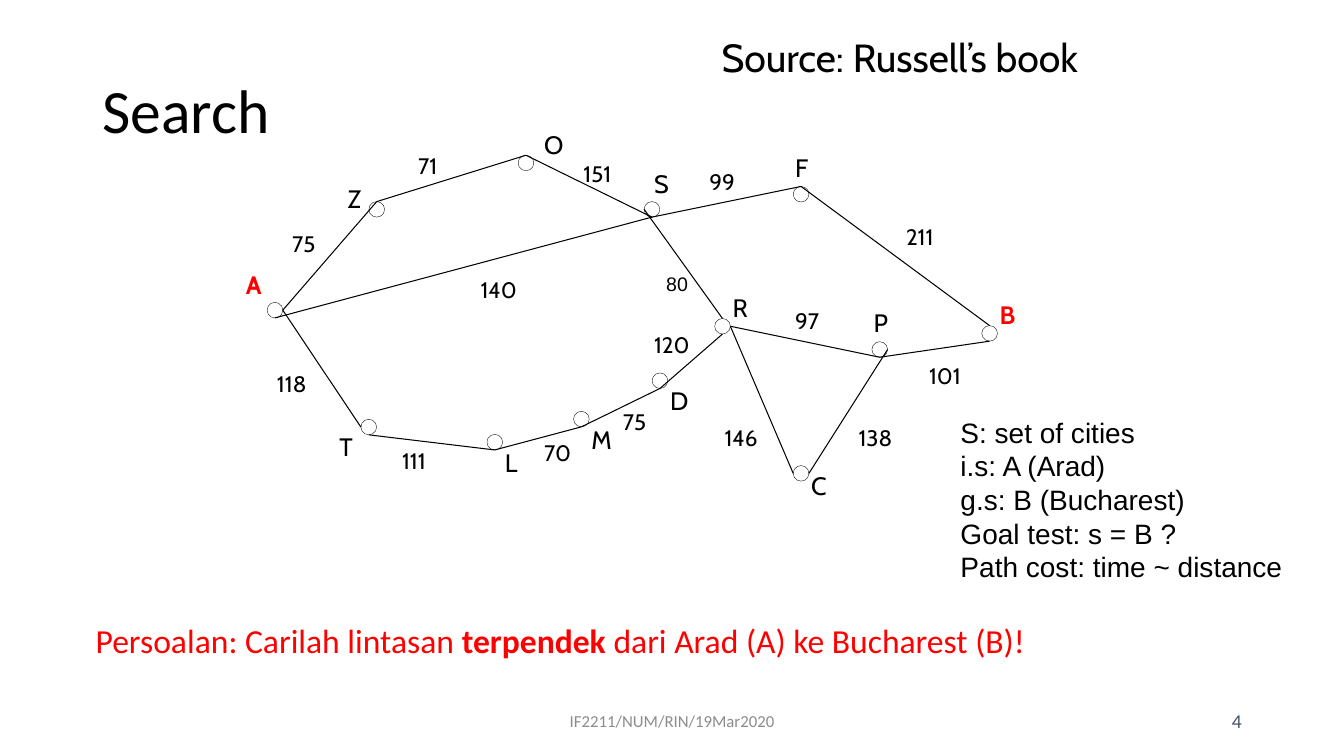
from lxml import etree
from pptx import Presentation
from pptx.dml.color import RGBColor
from pptx.enum.shapes import MSO_CONNECTOR as CONN, MSO_SHAPE as SHAPE
from pptx.enum.text import MSO_ANCHOR as ANCHOR, PP_ALIGN as ALIGN
from pptx.oxml.ns import qn
from pptx.util import Pt

BLACK = RGBColor(0x00, 0x00, 0x00)
RED = RGBColor(0xFF, 0x00, 0x00)
GRAY = RGBColor(0x8C, 0x8C, 0x8C)
SLATE = RGBColor(0x44, 0x54, 0x6A)

NODE_W, NODE_H = 11.2, 11.1
# Connection sites as fractions of the node's width and height
SITES = {"top": (0.5, 0), "bottom": (0.5, 1), "left": (0, 0.5), "right": (1, 0.5)}

# City: node left and top, label left and top
CITIES = {
    "A": (190.8, 216, 168.5, 188.6),
    "T": (257.8, 299.5, 235.4, 304.6),
    "R": (510.5, 227.5, 516.2, 205.2),
    "C": (566.6, 332.6, 572.4, 332.6),
    "P": (622.8, 244.1, 617, 216),
    "B": (701.3, 232.6, 707, 210.2),
    "F": (566.6, 133.2, 560.9, 105.1),
    "S": (460.1, 144, 460.1, 116.6),
    "O": (370.1, 110.9, 381.6, 88.6),
    "Z": (263.5, 144, 241.2, 127.4),
    "D": (465.8, 266.4, 471.6, 271.4),
    "M": (409.7, 293.8, 415.4, 299.5),
    "L": (347.8, 310.3, 353.5, 316.1),
}
ENDPOINTS = ("A", "B")

# Road: both ends, distance, distance label left and top
ROADS = [
    ("A", "right", "Z", "top", "75", 201.6, 160.6),
    ("Z", "top", "O", "top", "71", 291.6, 105.1),
    ("O", "top", "S", "bottom", "151", 409.7, 110.9),
    ("A", "bottom", "S", "bottom", "140", 336.2, 193.7),
    ("P", "bottom", "B", "bottom", "101", 656.6, 254.9),
    ("R", "right", "P", "bottom", "97", 560.9, 216),
    ("C", "right", "P", "right", "138", 606.2, 299.5),
    ("C", "left", "R", "right", "146", 510.5, 299.5),
    ("D", "bottom", "R", "bottom", "120", 460.1, 233.3),
    ("M", "bottom", "D", "bottom", "75", 437.8, 288),
    ("L", "bottom", "M", "bottom", "70", 381.6, 310.3),
    ("T", "left", "A", "right", "118", 190.8, 260.6),
    ("T", "bottom", "L", "bottom", "111", 280.1, 316.1),
    ("R", "top", "S", "left", "80", 468.7, 190.8),
    ("S", "bottom", "F", "top", "99", 499.7, 116.6),
    ("F", "top", "B", "top", "211", 640.1, 155.5),
]


class Canvas:
    def __init__(self, slide, ink=BLACK):
        self.shapes = slide.shapes
        self.ink = ink

    def text(self, x, y, w, h, lines, font, size, color=None, bold=False,
             align=ALIGN.LEFT, anchor=ANCHOR.TOP, wrap=True, spacing=None):
        """Each line is a string or a list of (string, bold) runs."""
        sp = self.shapes.add_textbox(Pt(x), Pt(y), Pt(w), Pt(h))
        tf = sp.text_frame
        tf.word_wrap = wrap
        tf.vertical_anchor = anchor
        for i, line in enumerate(lines):
            p = tf.add_paragraph() if i else tf.paragraphs[0]
            p.alignment = align
            if spacing:
                p.line_spacing = spacing
            for part, heavy in [(line, bold)] if isinstance(line, str) else line:
                r = p.add_run()
                r.text = part
                r.font.name = font
                r.font.size = Pt(size)
                r.font.bold = heavy
                r.font.color.rgb = color or self.ink

    def node(self, x, y):
        sp = self.shapes.add_shape(SHAPE.OVAL, Pt(x), Pt(y), Pt(NODE_W), Pt(NODE_H))
        sp.shadow.inherit = False
        sp.fill.background()
        sp.line.color.rgb = self.ink
        sp.line.width = Pt(0.25)

    def line(self, start, end):
        cn = self.shapes.add_connector(CONN.STRAIGHT, *map(Pt, start + end))
        cn.line.color.rgb = self.ink
        cn.line.width = Pt(0.75)
        etree.SubElement(cn._element.spPr, qn("a:effectLst"))


def site(city, side):
    x, y = CITIES[city][:2]
    fx, fy = SITES[side]
    return x + fx * NODE_W, y + fy * NODE_H


def main():
    prs = Presentation()
    prs.slide_width, prs.slide_height = Pt(960), Pt(540)
    s = Canvas(prs.slides.add_slide(prs.slide_layouts[6]))

    # Headings
    s.text(66.2, 28.8, 828, 104.4, ["Search"], "Calibri", 44,
           anchor=ANCHOR.MIDDLE, spacing=0.9)
    s.text(508.3, 20.2, 293, 41, ["Source: Russell’s book"], "Cabin", 28)

    # Problem definition
    s.text(679, 293, 261.4, 128.2,
           ["S: set of cities", "i.s: A (Arad)", "g.s: B (Bucharest)",
            "Goal test: s = B ?", "Path cost: time ~ distance"], "Arial", 20)

    # Map: cities, then roads with distances, then city names
    for x, y, *_ in CITIES.values():
        s.node(x, y)
    for a, side_a, b, side_b, distance, x, y in ROADS:
        s.line(site(a, side_a), site(b, side_b))
        if distance == "80":
            s.text(x, y, 30.2, 23.8, [distance], "Arial", 14, wrap=False)
        else:
            s.text(x, y, 44.8, 26.6, [distance], "Cabin", 16)
    for city, (_, _, x, y) in CITIES.items():
        is_end = city in ENDPOINTS
        s.text(x, y, 33.8, 28.8, [city], "Cabin", 18,
               color=RED if is_end else BLACK, bold=is_end)

    # Task
    s.text(61.2, 439.2, 682.6, 36,
           [[("Persoalan: Carilah lintasan ", False), ("terpendek ", True),
             ("dari Arad (A) ke Bucharest (B)!", False)]],
           "Calibri", 24, color=RED, wrap=False)

    # Footer
    s.text(318.2, 500.4, 324, 28.8, ["IF2211/NUM/RIN/19Mar2020"], "Calibri", 12,
           color=GRAY, align=ALIGN.CENTER, anchor=ANCHOR.MIDDLE)
    s.text(678.2, 500.4, 216, 28.8, ["4"], "Calibri", 14,
           color=SLATE, align=ALIGN.RIGHT, anchor=ANCHOR.MIDDLE)

    prs.save("out.pptx")


if __name__ == "__main__":
    main()
